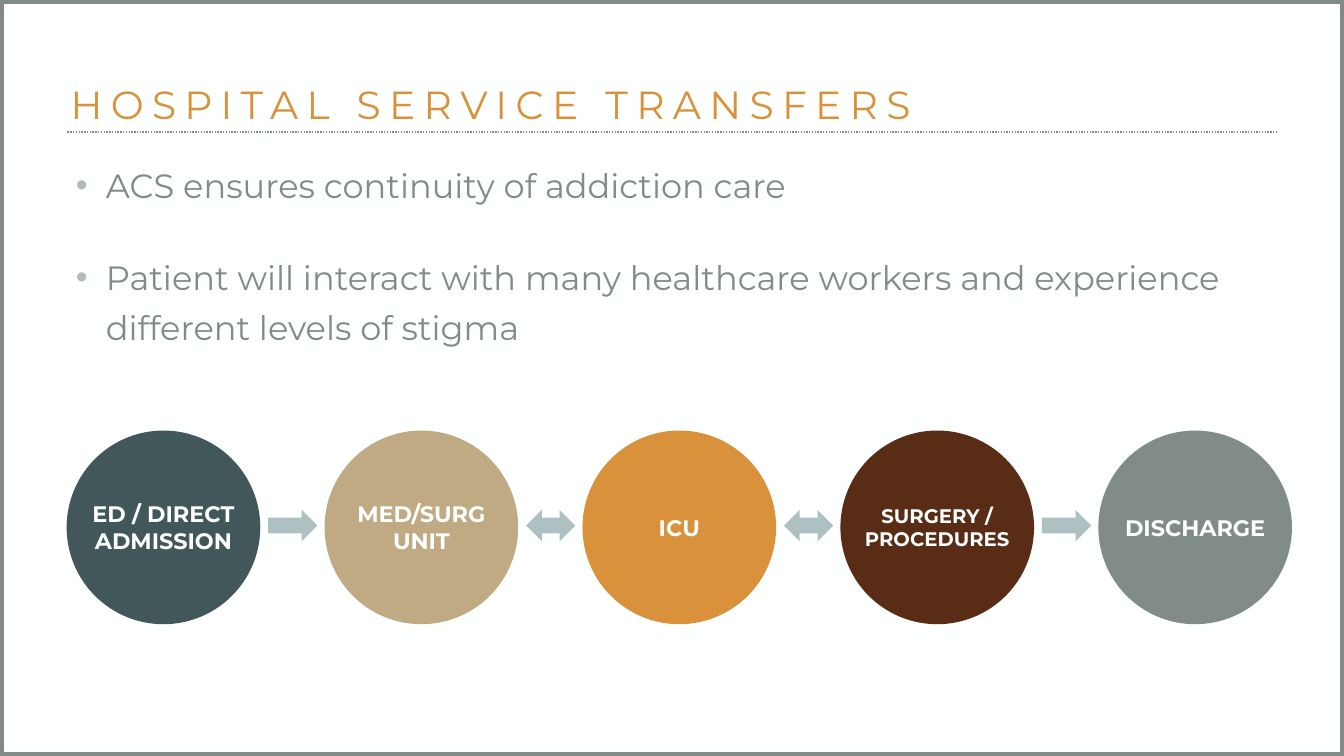
from dataclasses import dataclass

from lxml import etree
from pptx import Presentation
from pptx.dml.color import RGBColor
from pptx.enum.dml import MSO_LINE
from pptx.enum.shapes import MSO_CONNECTOR, MSO_SHAPE
from pptx.enum.text import MSO_ANCHOR, PP_ALIGN
from pptx.oxml.ns import qn
from pptx.shapes.autoshape import Shape
from pptx.slide import Slide
from pptx.util import Cm, Pt

RECTANGLE = MSO_SHAPE.RECTANGLE
OVAL = MSO_SHAPE.OVAL
ONE_WAY = MSO_SHAPE.RIGHT_ARROW
TWO_WAY = MSO_SHAPE.LEFT_RIGHT_ARROW
STRAIGHT = MSO_CONNECTOR.STRAIGHT
DOTTED = MSO_LINE.ROUND_DOT
TOP, MIDDLE, BOTTOM = MSO_ANCHOR.TOP, MSO_ANCHOR.MIDDLE, MSO_ANCHOR.BOTTOM
LEFT, CENTER = PP_ALIGN.LEFT, PP_ALIGN.CENTER


@dataclass(frozen=True)
class Theme:
    font: str = "Montserrat"
    white: str = "FEFFFF"
    gray: str = "818C88"
    bullet: str = "B3BAB8"
    orange: str = "D9923B"
    slate: str = "415759"
    sand: str = "BFAA83"
    brown: str = "582C15"
    arrow: str = "ADC1C3"
    title_size: int = 28
    body_size: int = 24
    label_size: int = 16
    small_label_size: int = 14


@dataclass(frozen=True)
class Area:
    left: float
    top: float
    width: float
    height: float

    def lengths(self) -> tuple[Cm, Cm, Cm, Cm]:
        return Cm(self.left), Cm(self.top), Cm(self.width), Cm(self.height)


@dataclass(frozen=True)
class TextStyle:
    size: int
    color: str
    bold: bool = False
    tracking: int = 0
    align: PP_ALIGN = LEFT
    anchor: MSO_ANCHOR = TOP
    line_spacing: float = 1.0
    space_before: int = 0
    inset: float = 0
    bulleted: bool = False


@dataclass(frozen=True)
class Stage:
    label: str
    color: str
    size: int
    label_width: float = 3.6


THEME = Theme()
PAGE = Area(0, 0, 33.87, 19.05)
TITLE = Area(1.7, 1.5, 30.48, 1.8)
BODY = Area(1.7, 3.89, 30.48, 5.41)
RULE_Y, RULE_END = 3.33, 32.16

TITLE_STYLE = TextStyle(THEME.title_size, THEME.orange, tracking=600,
                        anchor=BOTTOM, line_spacing=0.9, inset=0.08)
BODY_STYLE = TextStyle(THEME.body_size, THEME.gray, line_spacing=1.25,
                       space_before=30, bulleted=True)

BULLETS = [
    "ACS ensures continuity of addiction care",
    "Patient will interact with many healthcare workers and experience "
    "different levels of stigma",
]

# Patient route: circles on an even pitch, one arrow in each gap
STAGES = [
    Stage("ED / DIRECT ADMISSION", THEME.slate, THEME.label_size),
    Stage("MED/SURG UNIT", THEME.sand, THEME.label_size),
    Stage("ICU", THEME.orange, THEME.label_size),
    Stage("SURGERY / PROCEDURES", THEME.brown, THEME.small_label_size, 4.22),
    Stage("DISCHARGE", THEME.gray, THEME.label_size),
]
TRANSFERS = [ONE_WAY, TWO_WAY, TWO_WAY, ONE_WAY]
ROUTE_LEFT, ROUTE_TOP = 1.68, 10.85
DIAMETER, PITCH = 4.88, 6.5
LABEL_HEIGHT = 1.35
ARROW = Area(ROUTE_LEFT + DIAMETER + 0.2, 12.85, 1.24, 0.79)


def rgb(color: str) -> RGBColor:
    return RGBColor.from_string(color)


def apply(target: object, values: dict[str, object]) -> None:
    for name, value in values.items():
        setattr(target, name, value)


def add_solid(page: Slide, kind: MSO_SHAPE, area: Area, color: str) -> Shape:
    shape = page.shapes.add_shape(kind, *area.lengths())
    shape.shadow.inherit = False
    shape.fill.solid()
    shape.fill.fore_color.rgb = rgb(color)
    shape.line.fill.background()
    return shape


def add_text(page: Slide, area: Area, lines: list[str], style: TextStyle) -> None:
    box = page.shapes.add_textbox(*area.lengths())
    frame = box.text_frame
    inset = Cm(style.inset)
    apply(frame, {"word_wrap": True, "vertical_anchor": style.anchor,
                  "margin_left": inset, "margin_right": inset,
                  "margin_top": inset, "margin_bottom": inset})
    for index, line in enumerate(lines):
        para = frame.add_paragraph() if index else frame.paragraphs[0]
        apply(para, {"alignment": style.align, "line_spacing": style.line_spacing,
                     "space_before": Pt(style.space_before)})
        span = para.add_run()
        span.text = line
        apply(span.font, {"name": THEME.font, "size": Pt(style.size),
                          "bold": style.bold})
        span.font.color.rgb = rgb(style.color)
        if style.tracking:
            span._r.get_or_add_rPr().set("spc", str(style.tracking))
        if style.bulleted:
            properties = para._p.get_or_add_pPr()
            properties.set("marL", str(Cm(0.97)))
            properties.set("indent", str(Cm(-0.76)))
            tint = etree.SubElement(properties, qn("a:buClr"))
            etree.SubElement(tint, qn("a:srgbClr"), val=THEME.bullet)
            etree.SubElement(properties, qn("a:buFont"), typeface="Arial")
            etree.SubElement(properties, qn("a:buChar"), char="•")


def add_frame(page: Slide) -> None:
    # Page background and border
    page.background.fill.solid()
    page.background.fill.fore_color.rgb = rgb(THEME.white)
    border = add_solid(page, RECTANGLE, PAGE, THEME.white)
    border.fill.background()
    border.line.color.rgb = rgb(THEME.gray)
    border.line.width = Pt(6)

    # Dotted rule under the title
    rule = page.shapes.add_connector(STRAIGHT, Cm(TITLE.left), Cm(RULE_Y),
                                     Cm(RULE_END), Cm(RULE_Y))
    rule.line.color.rgb = rgb(THEME.gray)
    apply(rule.line, {"width": Pt(1), "dash_style": DOTTED})
    etree.SubElement(rule._element.spPr, qn("a:effectLst"))


def add_route(page: Slide) -> None:
    # Stages with centred labels
    for index, stage in enumerate(STAGES):
        left = ROUTE_LEFT + index * PITCH
        add_solid(page, OVAL, Area(left, ROUTE_TOP, DIAMETER, DIAMETER), stage.color)
        label = Area(left + (DIAMETER - stage.label_width) / 2,
                     ROUTE_TOP + (DIAMETER - LABEL_HEIGHT) / 2,
                     stage.label_width, LABEL_HEIGHT)
        add_text(page, label, [stage.label],
                 TextStyle(stage.size, THEME.white, bold=True,
                           align=CENTER, anchor=MIDDLE))

    # Transfers between stages
    for index, kind in enumerate(TRANSFERS):
        area = Area(ARROW.left + index * PITCH, ARROW.top, ARROW.width, ARROW.height)
        add_solid(page, kind, area, THEME.arrow)


def main() -> None:
    deck = Presentation()
    apply(deck, {"slide_width": Cm(PAGE.width), "slide_height": Cm(PAGE.height)})
    page = deck.slides.add_slide(deck.slide_layouts[6])
    add_frame(page)
    add_text(page, TITLE, ["HOSPITAL SERVICE TRANSFERS"], TITLE_STYLE)
    add_text(page, BODY, BULLETS, BODY_STYLE)
    add_route(page)
    deck.save("out.pptx")


if __name__ == "__main__":
    main()
